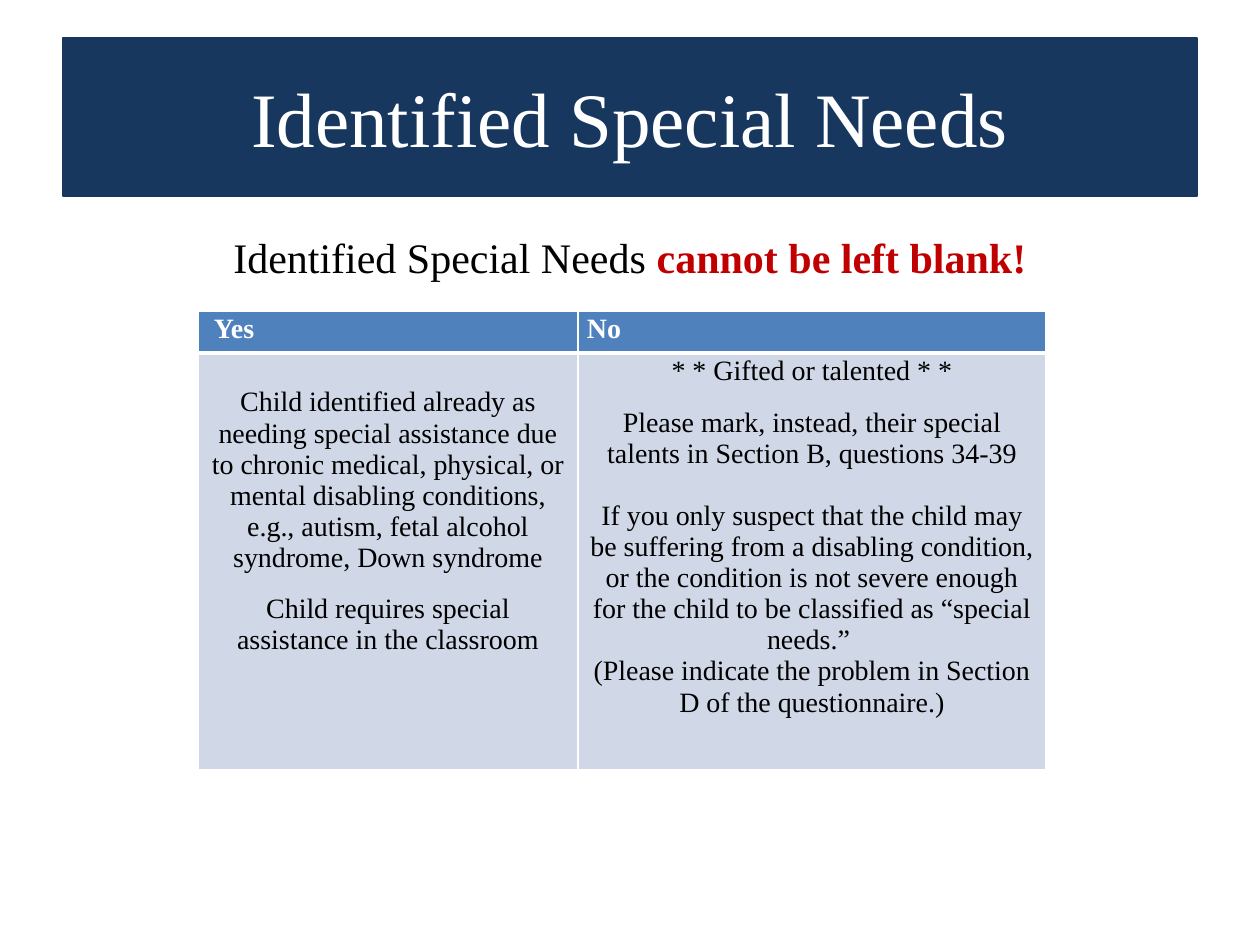
from dataclasses import dataclass

from lxml.etree import SubElement
from pptx import Presentation
from pptx.dml.color import RGBColor
from pptx.enum.text import MSO_ANCHOR, PP_ALIGN
from pptx.oxml.ns import qn
from pptx.util import Emu, Pt


@dataclass(frozen=True)
class Theme:
    font: str = "Times New Roman"
    navy: str = "17375E"
    blue: str = "4F81BD"
    pale: str = "D0D8E8"
    red: str = "C00000"
    black: str = "000000"
    white: str = "FFFFFF"
    title_size: int = 44
    lead_size: int = 24
    table_size: int = 16
    small_gap: float = 11.5
    line_gap: float = 17.75


THEME = Theme()

HEADERS = ("Yes", "No")
ANSWERS = (
    (
        ("Child identified already as needing special assistance due to chronic "
         "medical, physical, or mental disabling conditions, e.g., autism, fetal "
         "alcohol syndrome, Down syndrome", 0),
        ("Child requires special assistance in the classroom", THEME.small_gap),
    ),
    (
        ("* * Gifted or talented * *", 0),
        ("Please mark, instead, their special talents in Section B, "
         "questions 34-39", THEME.small_gap),
        ("If you only suspect that the child may be suffering from a disabling "
         "condition, or the condition is not severe enough for the child to be "
         "classified as “special needs.” ", THEME.line_gap),
        ("(Please indicate the problem in Section D of the questionnaire.)", 0),
    ),
)


def px(length):
    return Emu(round(length * 914400 / 126))


def color(value):
    return RGBColor.from_string(value)


def add_text(paragraph, text, *, size, ink=THEME.black, bold=False,
             align=PP_ALIGN.CENTER, before=0):
    paragraph.alignment = align
    if before:
        paragraph.space_before = Pt(before)
    run = paragraph.add_run()
    run.text = text
    run.font.name = THEME.font
    run.font.size = Pt(size)
    run.font.bold = bold
    run.font.color.rgb = color(ink)


def set_border(cell, side, width):
    properties = cell._tc.get_or_add_tcPr()
    line = SubElement(properties, qn(f"a:{side}"), w=str(Pt(width)))
    fill = SubElement(line, qn("a:solidFill"))
    SubElement(fill, qn("a:srgbClr"), val=THEME.white)


def format_cell(cell, fill, top_border, bottom_border, left=9, top=3):
    for side, width in (("lnL", 1), ("lnR", 1),
                        ("lnT", top_border), ("lnB", bottom_border)):
        set_border(cell, side, width)
    cell.fill.solid()
    cell.fill.fore_color.rgb = color(fill)
    cell.margin_left, cell.margin_right = px(left), px(9)
    cell.margin_top, cell.margin_bottom = px(top), px(3)


def place_title(slide, left, top, width, height):
    title = slide.shapes.title
    title.left, title.top = px(left), px(top)
    title.width, title.height = px(width), px(height)
    title.fill.solid()
    title.fill.fore_color.rgb = color(THEME.navy)
    title.line.color.rgb = color(THEME.navy)
    title.line.width = Pt(0.75)
    title.text_frame.vertical_anchor = MSO_ANCHOR.MIDDLE
    add_text(title.text_frame.paragraphs[0], "Identified Special Needs",
             size=THEME.title_size, ink=THEME.white)


def place_lead(slide, left, top, width, height):
    box = slide.shapes.add_textbox(px(left), px(top), px(width), px(height))
    frame = box.text_frame
    frame.word_wrap = True
    frame.margin_top = px(12)
    paragraph = frame.paragraphs[0]
    add_text(paragraph, "Identified Special Needs ", size=THEME.lead_size)
    add_text(paragraph, "cannot be left blank!", size=THEME.lead_size,
             ink=THEME.red, bold=True)


def place_table(slide, left, top, columns, rows):
    frame = slide.shapes.add_table(len(rows), len(columns), px(left), px(top),
                                   px(sum(columns)), px(sum(rows)))
    table = frame.table
    for column, width in zip(table.columns, columns):
        column.width = px(width)
    for row, height in zip(table.rows, rows):
        row.height = px(height)

    for index, (header, indent) in enumerate(zip(HEADERS, (16, 9))):
        cell = table.cell(0, index)
        format_cell(cell, THEME.blue, 1, 3, left=indent)
        add_text(cell.text_frame.paragraphs[0], header, size=THEME.table_size,
                 ink=THEME.white, bold=True, align=PP_ALIGN.LEFT)

    for index, (answer, inset) in enumerate(zip(ANSWERS, (34, 3))):
        cell = table.cell(1, index)
        format_cell(cell, THEME.pale, 3, 1, top=inset)
        text_frame = cell.text_frame
        for position, (text, gap) in enumerate(answer):
            paragraph = (text_frame.add_paragraph() if position
                         else text_frame.paragraphs[0])
            add_text(paragraph, text, size=THEME.table_size, before=gap)


def main():
    presentation = Presentation()
    presentation.slide_width, presentation.slide_height = px(1260), px(945)
    slide = presentation.slides.add_slide(presentation.slide_layouts[5])
    place_title(slide, 63, 38, 1134, 158)
    place_lead(slide, 63, 220, 1134, 708)
    place_table(slide, 198, 311, (380, 468), (42, 417))
    presentation.save("out.pptx")


if __name__ == "__main__":
    main()
